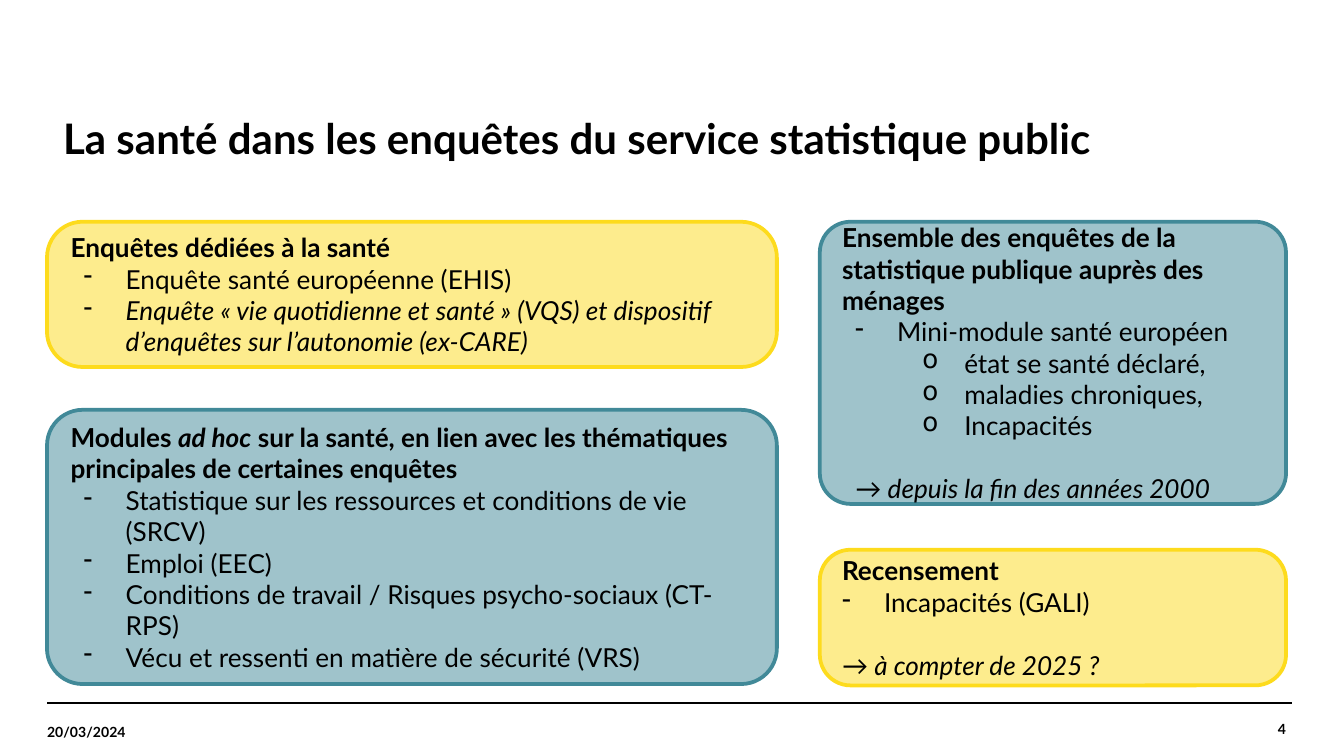
from lxml import etree
from pptx import Presentation
from pptx.dml.color import RGBColor
from pptx.enum import shapes, text
from pptx.oxml import ns
from pptx.util import Pt

BLACK = RGBColor(0x00, 0x00, 0x00)
GOLD = RGBColor(0xFD, 0xDB, 0x1D)
TEAL = RGBColor(0x41, 0x89, 0x98)


def put(frame, words, size=14, bold=False, left=0, hang=0, mark=None,
        level=0, gap=0, lead=None, align=text.PP_ALIGN.LEFT):
    """Add one paragraph; words between asterisks are set in italics."""
    para = frame.paragraphs[0]
    if para.runs:
        para = frame.add_paragraph()
    props = para._p.get_or_add_pPr()
    props.set("marL", str(Pt(left)))
    props.set("indent", str(Pt(-hang)))
    if mark:
        etree.SubElement(props, ns.qn("a:buChar")).set("char", mark)
    else:
        etree.SubElement(props, ns.qn("a:buNone"))
    para.level = level
    para.alignment = align
    para.space_before = Pt(gap)
    if lead:
        para.line_spacing = lead
    for i, part in enumerate(words.split("*")):
        if part:
            run = para.add_run()
            run.text = part
            font = run.font
            font.name, font.size, font.bold = "Lato", Pt(size), bold
            font.italic = i % 2 == 1
            font.color.rgb = BLACK


deck = Presentation()
deck.slide_width, deck.slide_height = Pt(720), Pt(405)
slide = deck.slides.add_slide(deck.slide_layouts[5])

# Title
title = slide.shapes.title
title.left, title.top, title.width, title.height = Pt(25.2), Pt(54), Pt(663), Pt(42.5)
title.text_frame.word_wrap = True
title.text_frame.auto_size = text.MSO_AUTO_SIZE.NONE
title.text_frame.vertical_anchor = text.MSO_ANCHOR.MIDDLE
put(title.text_frame, "La santé dans les enquêtes du service statistique public",
    size=22.5, bold=True, left=1.4, lead=0.9)

# Footer
rule = slide.shapes.add_connector(
    shapes.MSO_CONNECTOR.STRAIGHT, Pt(25.2), Pt(376.6), Pt(691.9), Pt(376.6))
rule.line.color.rgb = BLACK
rule.line.width = Pt(0.8)
etree.SubElement(rule._element.spPr, ns.qn("a:effectLst"))

for words, x, y, wide, align in (
    ("20/03/2024", 25.2, 378, 92.2, text.PP_ALIGN.LEFT),
    ("4", 582.5, 376.6, 106.5, text.PP_ALIGN.RIGHT),
):
    frame = slide.shapes.add_textbox(Pt(x), Pt(y), Pt(wide), Pt(27.7)).text_frame
    frame.margin_left = frame.margin_right = frame.margin_top = frame.margin_bottom = 0
    frame.word_wrap = True
    frame.vertical_anchor = text.MSO_ANCHOR.MIDDLE
    put(frame, words, size=7.5, bold=True, align=align)

# Survey cards: first line is the heading, the others carry their format
DASH = dict(left=29.5, hang=22.5, mark="-")
FLUSH = dict(left=22.5, hang=22.5, mark="-")
RING = dict(left=65.5, hang=22.5, mark="o", level=1)
LINE = 16.8
WEST = (25.2, 391, 19.1)  # left, width, corner radius
EAST = (439.2, 249.8, 16.5)

cards = (
    (WEST, 118.8, 77.8, GOLD, "Enquêtes dédiées à la santé", (
        ("Enquête santé européenne (EHIS)", DASH),
        ("*Enquête « vie quotidienne et santé » (VQS) et dispositif "
         "d’enquêtes sur l’autonomie (ex-CARE)*", DASH))),
    (WEST, 219.6, 146.9, TEAL,
     "Modules *ad hoc* sur la santé, en lien avec les thématiques "
     "principales de certaines enquêtes", (
         ("Statistique sur les ressources et conditions de vie (SRCV)", DASH),
         ("Emploi (EEC)", DASH),
         ("Conditions de travail / Risques psycho-sociaux (CT-RPS)", DASH),
         ("Vécu et ressenti en matière de sécurité (VRS)", DASH))),
    (EAST, 118.8, 151.2, TEAL,
     "Ensemble des enquêtes de la statistique publique auprès des ménages", (
         ("Mini-module santé européen", DASH),
         ("état se santé déclaré,", RING),
         ("maladies chroniques,", RING),
         ("Incapacités", RING),
         ("*→ depuis la fin des années 2000*", dict(left=7.2, gap=LINE)))),
    (EAST, 294.5, 72.7, GOLD, "Recensement", (
        ("Incapacités (GALI)", FLUSH),
        ("*→ à compter de 2025 ?*", dict(gap=LINE)))),
)

for (x, wide, curve), y, high, hue, head, items in cards:
    card = slide.shapes.add_shape(
        shapes.MSO_SHAPE.ROUNDED_RECTANGLE, Pt(x), Pt(y), Pt(wide), Pt(high))
    card.adjustments[0] = curve / high
    card.shadow.inherit = False
    card.fill.solid()
    card.fill.fore_color.rgb = hue
    tint = card._element.spPr.find(ns.qn("a:solidFill"))[0]
    etree.SubElement(tint, ns.qn("a:alpha")).set("val", "50000")
    card.line.color.rgb = hue
    card.line.width = Pt(2)
    frame = card.text_frame
    frame.word_wrap = True
    frame.vertical_anchor = text.MSO_ANCHOR.MIDDLE
    put(frame, head, bold=True)
    for words, form in items:
        put(frame, words, **form)

deck.save("out.pptx")
